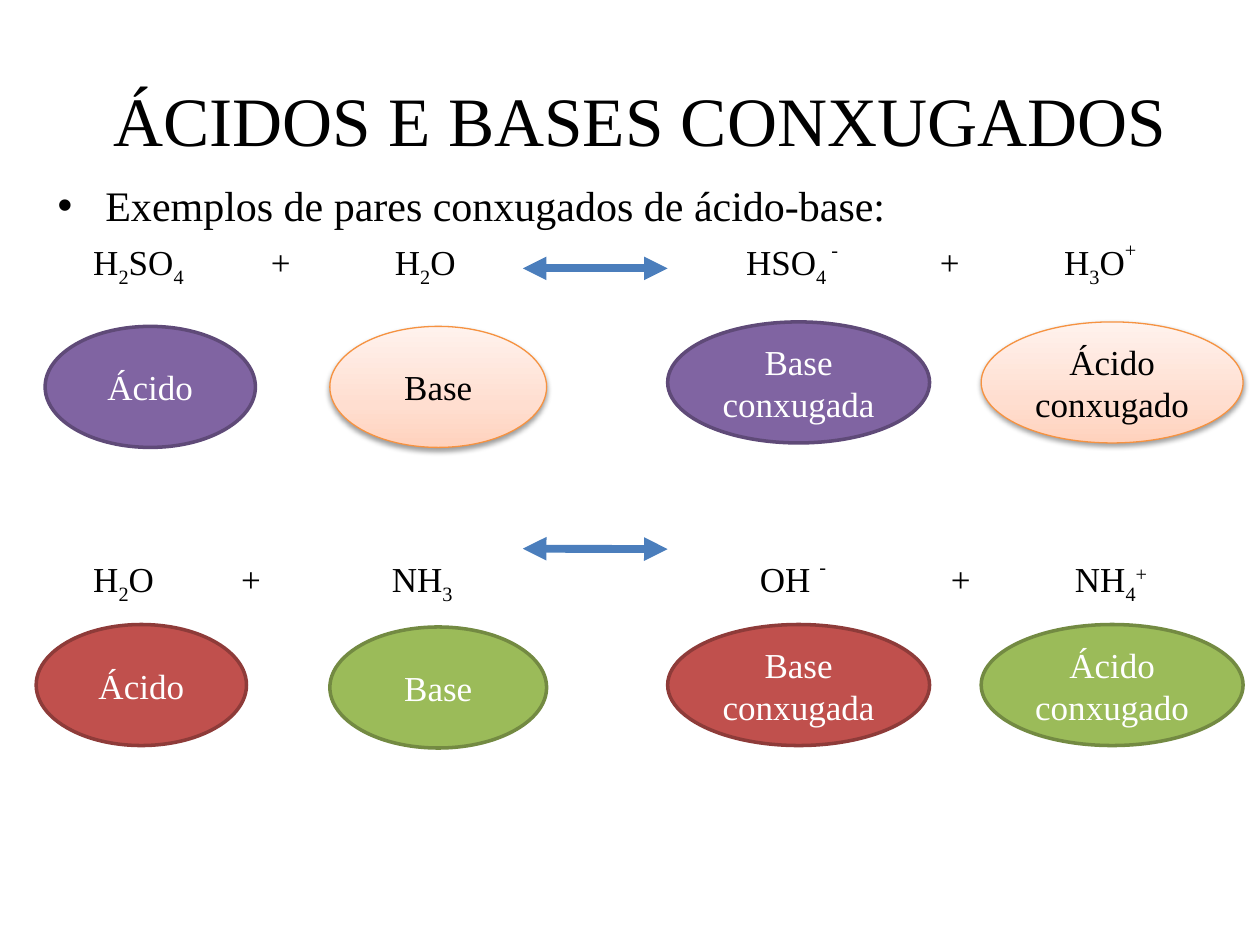
"""Build a slide on conjugate acid-base pairs with two example reactions."""
import lxml.etree
import pptx
import pptx.dml.color
import pptx.enum.shapes
import pptx.enum.text
import pptx.oxml.ns
import pptx.util

Cm = pptx.util.Cm
Pt = pptx.util.Pt
RGB = pptx.dml.color.RGBColor.from_string
ALIGN = pptx.enum.text.PP_ALIGN
ANCHOR = pptx.enum.text.MSO_ANCHOR

THEME = {
    "font": "Times New Roman",
    "title": 39.6, "lead": 24, "text": 20,
    "black": "000000", "white": "FFFFFF", "arrow": "4B7EBC",
    "purple": ("8064A2", "5F4A78"),
    "red": ("C0504D", "8E3B39"),
    "green": ("9BBB59", "738A42"),
    "peach": ([(0, "FFD2BD"), (35000, "FFDED0"), (100000, "FFF2ED")], "F69240"),
}


def add_run(p, text, size, color="black", baseline=0):
    r = p.add_run()
    r.text = text
    r.font.name = THEME["font"]
    r.font.size = Pt(size)
    r.font.color.rgb = RGB(THEME[color])
    if baseline:
        r.font._element.set("baseline", str(baseline * 1000))


def add_xml(parent, tag, **attrs):
    child = lxml.etree.SubElement(parent, pptx.oxml.ns.qn(tag))
    for name, value in attrs.items():
        child.set(name, str(value))
    return child


prs = pptx.Presentation()
prs.slide_width, prs.slide_height = Cm(25.4), Cm(19.05)
s = prs.slides.add_slide(prs.slide_layouts[1])

title, body = s.placeholders
for sp, top, height in ((title, 0.61, 3.56), (body, 3.5, 15.19)):
    sp.left, sp.top, sp.width, sp.height = Cm(0.91), Cm(top), Cm(23.98), Cm(height)
    sp.text_frame.auto_size = pptx.enum.text.MSO_AUTO_SIZE.NONE

title.text_frame.vertical_anchor = ANCHOR.MIDDLE
p = title.text_frame.paragraphs[0]
p.alignment = ALIGN.CENTER
add_run(p, "ÁCIDOS E BASES CONXUGADOS", THEME["title"])

p = body.text_frame.paragraphs[0]
p.alignment = ALIGN.JUSTIFY
pPr = p._p.get_or_add_pPr()
pPr.set("marL", str(Cm(0.96)))
pPr.set("indent", str(Cm(-0.96)))
add_xml(pPr, "a:buChar", char="•")
add_run(p, "Exemplos de pares conxugados de ácido-base:", THEME["lead"])

REACTIONS = [
    (4.61, (0.71, 4.29, 6.79, 13.87, 17.78, 20.28),
     [[("H", 0), ("2", -25), ("SO", 0), ("4", -25)], [("+", 0)],
      [("H", 0), ("2", -25), ("O", 0)],
      [("HSO", 0), ("4 ", -25), ("-", 50)], [("+", 0)],
      [("H", 0), ("3", -25), ("O", 0), ("+", 50)]]),
    (11, (0.71, 3.69, 6.73, 14.15, 18, 20.5),
     [[("H", 0), ("2", -25), ("O", 0)], [("+", 0)],
      [("NH", 0), ("3", -25)],
      [("OH ", 0), ("-", 50)], [("+", 0)],
      [("NH", 0), ("4", -25), ("+", 30)]]),
]
for top, tabs, terms in REACTIONS:
    sp = s.shapes.add_textbox(Cm(1.17), Cm(top), Cm(23.5), Cm(1.2))
    tf = sp.text_frame
    tf.word_wrap = True
    tf.vertical_anchor = ANCHOR.BOTTOM
    tf.margin_left = tf.margin_right = tf.margin_top = tf.margin_bottom = 0
    p = tf.paragraphs[0]
    p.alignment = ALIGN.LEFT
    tab_list = add_xml(p._p.get_or_add_pPr(), "a:tabLst")
    for tab, term in zip(tabs, terms):
        add_xml(tab_list, "a:tab", pos=int(Cm(tab)), algn="l")
        add_run(p, "\t", THEME["text"])
        for text, baseline in term:
            add_run(p, text, THEME["text"], baseline=baseline)

COLUMNS = [("Base", 6.65, 4.37), ("Base conxugada", 13.46, 5.28),
           ("Ácido conxugado", 19.78, 5.28)]
ROWS = [
    (0.91, (6.58, 6.58, 6.49, 6.49), ("purple", "peach")),
    (0.73, (12.59, 12.64, 12.59, 12.59), ("red", "green")),
]
for first_left, tops, colors in ROWS:
    cells = [("Ácido", first_left, 4.24)] + COLUMNS
    for (text, left, width), top, color in zip(cells, tops, colors * 2):
        fill, line = THEME[color]
        sp = s.shapes.add_shape(pptx.enum.shapes.MSO_SHAPE.OVAL,
                                Cm(left), Cm(top), Cm(width), Cm(2.44))
        sp.shadow.inherit = False
        sp.line.color.rgb = RGB(line)
        if color == "peach":
            sp.line.width = Pt(0.75)
            sp.fill.gradient()
            sp.fill.gradient_angle = 90
            stops = sp._element.spPr.find(".//" + pptx.oxml.ns.qn("a:gsLst"))
            stops.clear()
            for pos, value in fill:
                add_xml(add_xml(stops, "a:gs", pos=pos), "a:srgbClr", val=value)
            effects = sp._element.spPr.find(pptx.oxml.ns.qn("a:effectLst"))
            shadow = add_xml(effects, "a:outerShdw", blurRad=int(Pt(3.1)),
                             dist=int(Pt(1.6)), dir=5400000, rotWithShape=0)
            add_xml(add_xml(shadow, "a:srgbClr", val=THEME["black"]),
                    "a:alpha", val=38000)
        else:
            sp.line.width = Pt(2)
            sp.fill.solid()
            sp.fill.fore_color.rgb = RGB(fill)
        tf = sp.text_frame
        tf.word_wrap = True
        tf.vertical_anchor = ANCHOR.MIDDLE
        p = tf.paragraphs[0]
        p.alignment = ALIGN.CENTER
        add_run(p, text, THEME["text"], "black" if color == "peach" else "white")

for start, end in ((5.41, 5.41), (11.06, 11.07)):
    arrow = s.shapes.add_connector(pptx.enum.shapes.MSO_CONNECTOR.STRAIGHT,
                                   Cm(10.54), Cm(start), Cm(13.46), Cm(end))
    arrow.line.color.rgb = RGB(THEME["arrow"])
    arrow.line.width = Pt(4.5)
    ln = arrow.line._get_or_add_ln()
    add_xml(ln, "a:headEnd", type="triangle")
    add_xml(ln, "a:tailEnd", type="triangle")
    add_xml(arrow._element.spPr, "a:effectLst")

prs.save("out.pptx")
